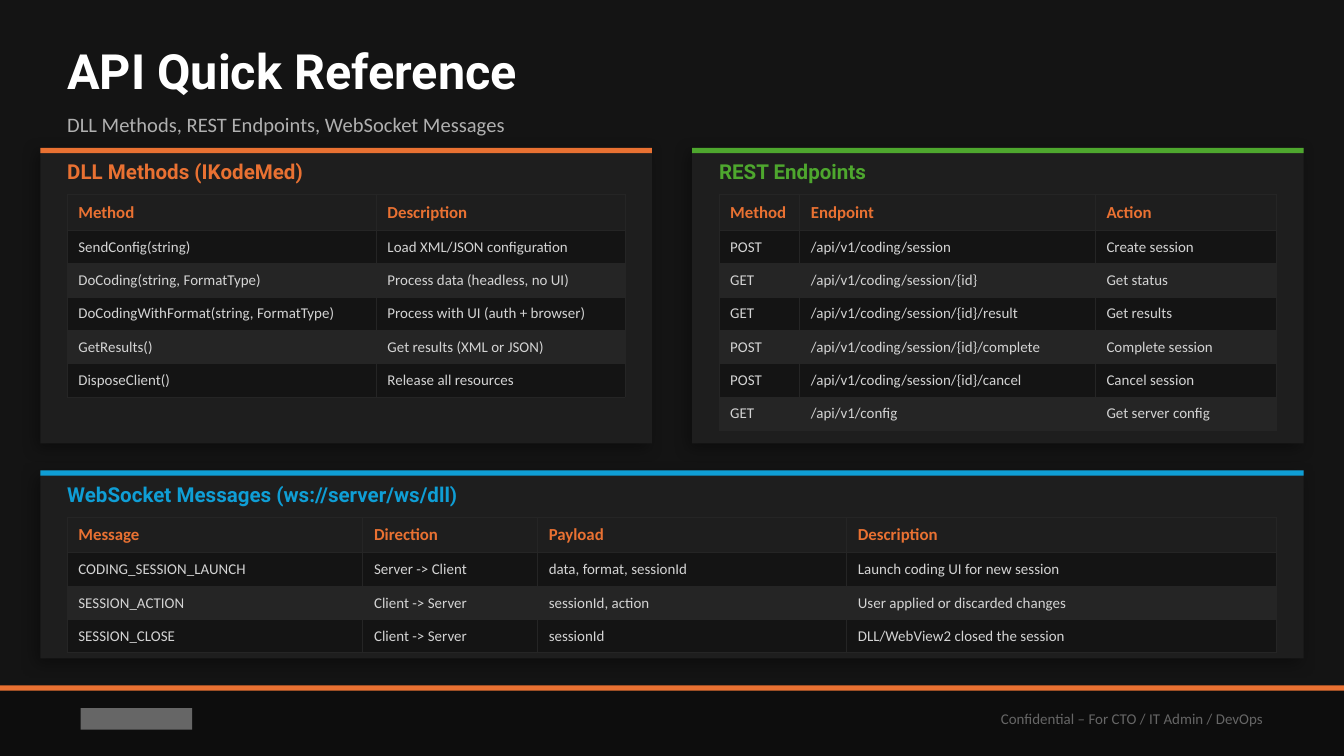
from typing import NamedTuple

from lxml.etree import SubElement
from pptx import Presentation
from pptx.dml.color import RGBColor
from pptx.enum.shapes import MSO_SHAPE
from pptx.enum.text import MSO_ANCHOR, MSO_AUTO_SIZE, PP_ALIGN
from pptx.oxml import parse_xml
from pptx.oxml.ns import nsdecls, qn
from pptx.util import Inches, Pt

ORANGE = RGBColor(0xE9, 0x71, 0x32)
GREEN = RGBColor(0x4E, 0xA7, 0x2E)
BLUE = RGBColor(0x0F, 0x9E, 0xD5)
WHITE = RGBColor(0xFF, 0xFF, 0xFF)
LIGHT = RGBColor(0xD4, 0xD4, 0xD4)
SILVER = RGBColor(0xB0, 0xB0, 0xB0)
GRAY = RGBColor(0x66, 0x66, 0x66)
BACKGROUND = RGBColor(0x14, 0x14, 0x14)
FOOTER = RGBColor(0x0D, 0x0D, 0x0D)
PANEL = RGBColor(0x1E, 0x1E, 0x1E)
BAND = RGBColor(0x25, 0x25, 0x25)

HEADING_FONT = "Roboto"
BODY_FONT = "Calibri"
SLIDE_WIDTH, SLIDE_HEIGHT = 10, 10 * 9 / 16
FOOTER_TOP = 5.1
STRIPE = 0.04
PADDING = 0.2
HEADER_ROW, BODY_ROW = 0.26, 0.24


class Box(NamedTuple):
    left: float
    top: float
    width: float
    height: float


class Run(NamedTuple):
    text: str
    size: float
    color: RGBColor
    font: str = BODY_FONT
    bold: bool = False


class Panel(NamedTuple):
    title: str
    color: RGBColor
    box: Box
    columns: list[float]
    rows: list[list[str]]


PANELS = [
    Panel("DLL Methods (IKodeMed)", ORANGE, Box(0.3, 1.1, 4.55, 2.2), [2.3, 1.85], [
        ["Method", "Description"],
        ["SendConfig(string)", "Load XML/JSON configuration"],
        ["DoCoding(string, FormatType)", "Process data (headless, no UI)"],
        ["DoCodingWithFormat(string, FormatType)", "Process with UI (auth + browser)"],
        ["GetResults()", "Get results (XML or JSON)"],
        ["DisposeClient()", "Release all resources"],
    ]),
    Panel("REST Endpoints", GREEN, Box(5.15, 1.1, 4.55, 2.2), [0.6, 2.2, 1.35], [
        ["Method", "Endpoint", "Action"],
        ["POST", "/api/v1/coding/session", "Create session"],
        ["GET", "/api/v1/coding/session/{id}", "Get status"],
        ["GET", "/api/v1/coding/session/{id}/result", "Get results"],
        ["POST", "/api/v1/coding/session/{id}/complete", "Complete session"],
        ["POST", "/api/v1/coding/session/{id}/cancel", "Cancel session"],
        ["GET", "/api/v1/config", "Get server config"],
    ]),
    Panel("WebSocket Messages (ws://server/ws/dll)", BLUE, Box(0.3, 3.5, 9.4, 1.4),
          [2.2, 1.3, 2.3, 3.2], [
        ["Message", "Direction", "Payload", "Description"],
        ["CODING_SESSION_LAUNCH", "Server -> Client", "data, format, sessionId",
         "Launch coding UI for new session"],
        ["SESSION_ACTION", "Client -> Server", "sessionId, action",
         "User applied or discarded changes"],
        ["SESSION_CLOSE", "Client -> Server", "sessionId",
         "DLL/WebView2 closed the session"],
    ]),
]


def to_lengths(box: Box) -> list[Inches]:
    return [Inches(value) for value in box]


def add_runs(paragraph, runs: list[Run]) -> None:
    for item in runs:
        run = paragraph.add_run()
        run.text = item.text
        run.font.size = Pt(item.size)
        run.font.name = item.font
        run.font.bold = item.bold
        run.font.color.rgb = item.color


def fill_frame(frame, runs: list[Run], align=PP_ALIGN.LEFT, inset: bool = False) -> None:
    frame.word_wrap = True
    frame.auto_size = MSO_AUTO_SIZE.NONE
    frame.vertical_anchor = MSO_ANCHOR.MIDDLE
    if not inset:
        frame.margin_left = frame.margin_right = 0
        frame.margin_top = frame.margin_bottom = 0
    paragraph = frame.paragraphs[0]
    paragraph.alignment = align
    add_runs(paragraph, runs)


def add_text(slide, box: Box, runs: list[Run], align=PP_ALIGN.LEFT, inset: bool = False) -> None:
    fill_frame(slide.shapes.add_textbox(*to_lengths(box)).text_frame, runs, align, inset)


def add_rectangle(slide, box: Box, color: RGBColor):
    shape = slide.shapes.add_shape(MSO_SHAPE.RECTANGLE, *to_lengths(box))
    shape.shadow.inherit = False
    shape.fill.solid()
    shape.fill.fore_color.rgb = color
    shape.line.fill.background()
    return shape


def add_shadow(shape) -> None:
    effects = shape.element.spPr.find(qn("a:effectLst"))
    effects.append(parse_xml(
        f'<a:outerShdw {nsdecls("a")} blurRad="{Pt(8)}" dist="{Pt(3)}" dir="{135 * 60000}" '
        'algn="bl" rotWithShape="0"><a:srgbClr val="000000"><a:alpha val="35000"/>'
        '</a:srgbClr></a:outerShdw>'))


def add_borders(cell) -> None:
    properties = cell._tc.get_or_add_tcPr()
    for side in ("a:lnL", "a:lnR", "a:lnT", "a:lnB"):
        line = SubElement(properties, qn(side), w=str(Pt(0.5)))
        SubElement(SubElement(line, qn("a:solidFill")), qn("a:srgbClr"), val=str(BAND))


def format_cell(cell, text: str, row: int) -> None:
    cell.margin_left = cell.margin_right = Pt(6)
    cell.margin_top = cell.margin_bottom = Pt(4)
    cell.vertical_anchor = MSO_ANCHOR.MIDDLE
    add_borders(cell)
    cell.fill.solid()
    if row == 0:
        cell.fill.fore_color.rgb = PANEL
        run = Run(text, 9, ORANGE, bold=True)
    else:
        cell.fill.fore_color.rgb = BACKGROUND if row % 2 else BAND
        run = Run(text, 8, LIGHT)
    add_runs(cell.text_frame.paragraphs[0], [run])


def add_table(slide, left: float, top: float, columns: list[float], rows: list[list[str]]) -> None:
    heights = [HEADER_ROW] + [BODY_ROW] * (len(rows) - 1)
    box = Box(left, top, sum(columns), sum(heights))
    table = slide.shapes.add_table(len(rows), len(columns), *to_lengths(box)).table
    table.horz_banding = False
    for column, width in zip(table.columns, columns):
        column.width = Inches(width)
    for index, (height, texts) in enumerate(zip(heights, rows)):
        table.rows[index].height = Inches(height)
        for cell, text in zip(table.rows[index].cells, texts):
            format_cell(cell, text, index)


def add_panel(slide, panel: Panel) -> None:
    box = panel.box
    left = box.left + PADDING
    add_shadow(add_rectangle(slide, box, PANEL))
    add_rectangle(slide, box._replace(height=STRIPE), panel.color)
    add_text(slide, Box(left, box.top + 0.05, box.width - 2 * PADDING, 0.25),
             [Run(panel.title, 11, panel.color, HEADING_FONT, True)])
    add_table(slide, left, box.top + 0.35, panel.columns, panel.rows)


def add_footer(slide) -> None:
    bar = Box(0, FOOTER_TOP, SLIDE_WIDTH, SLIDE_HEIGHT - FOOTER_TOP)
    add_rectangle(slide, bar, FOOTER)
    add_rectangle(slide, bar._replace(height=STRIPE), ORANGE)
    add_rectangle(slide, Box(0.6, 5.27, 0.83, 0.16), GRAY)
    add_text(slide, Box(5.5, 5.15, 4, 0.4),
             [Run("Confidential – For CTO / IT Admin / DevOps", 8, GRAY)],
             PP_ALIGN.RIGHT, inset=True)


def main() -> None:
    presentation = Presentation()
    presentation.slide_width = Inches(SLIDE_WIDTH)
    presentation.slide_height = Inches(SLIDE_HEIGHT)
    slide = presentation.slides.add_slide(presentation.slide_layouts[5])
    slide.background.fill.solid()
    slide.background.fill.fore_color.rgb = BACKGROUND

    add_footer(slide)
    title = slide.shapes.title
    title.left, title.top, title.width, title.height = to_lengths(Box(0.5, 0.25, 9, 0.55))
    fill_frame(title.text_frame, [Run("API Quick Reference", 26, WHITE, HEADING_FONT, True)])
    add_text(slide, Box(0.5, 0.75, 9, 0.35),
             [Run("DLL Methods, REST Endpoints, WebSocket Messages", 11, SILVER)])
    for panel in PANELS:
        add_panel(slide, panel)
    presentation.save("out.pptx")


if __name__ == "__main__":
    main()
